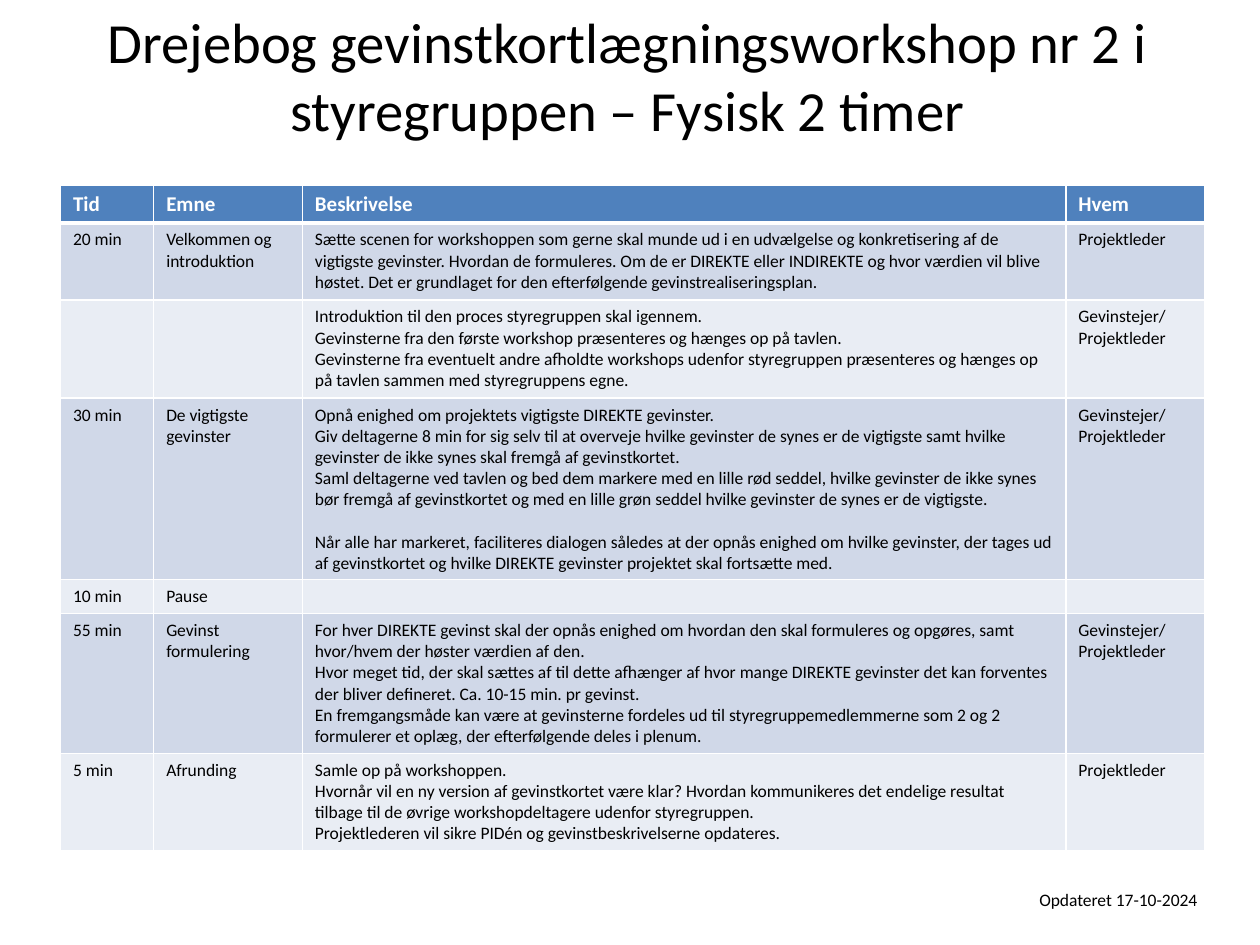
from lxml import etree
from pptx import Presentation
from pptx.dml.color import RGBColor
from pptx.enum.text import MSO_ANCHOR, PP_ALIGN
from pptx.oxml.ns import qn
from pptx.util import Inches, Pt

BLACK = RGBColor(0x00, 0x00, 0x00)
WHITE = RGBColor(0xFF, 0xFF, 0xFF)
HEADER_BLUE = RGBColor(0x4F, 0x81, 0xBD)
BAND_DARK = RGBColor(0xD0, 0xD8, 0xE8)
BAND_LIGHT = RGBColor(0xE9, 0xED, 0xF4)
FONT = "Calibri"

COLUMN_WIDTHS = [0.74, 1.18, 6.06, 1.1]
ROW_HEIGHTS = [0.29, 0.61, 0.78, 1.44, 0.27, 1.11, 0.77]
OWNERS = "Gevinstejer/\nProjektleder"
AGENDA = [
    ("Tid", "Emne", "Beskrivelse", "Hvem"),
    ("20 min", "Velkommen og introduktion",
     "Sætte scenen for workshoppen som gerne skal munde ud i en udvælgelse og "
     "konkretisering af de vigtigste gevinster. Hvordan de formuleres. Om de er "
     "DIREKTE eller INDIREKTE og hvor værdien vil blive høstet. Det er grundlaget "
     "for den efterfølgende gevinstrealiseringsplan.",
     "Projektleder"),
    ("", "",
     "Introduktion til den proces styregruppen skal igennem.\n"
     "Gevinsterne fra den første workshop præsenteres og hænges op på tavlen.\n"
     "Gevinsterne fra eventuelt andre afholdte workshops udenfor styregruppen "
     "præsenteres og hænges op på tavlen sammen med styregruppens egne.",
     OWNERS),
    ("30 min", "De vigtigste gevinster",
     "Opnå enighed om projektets vigtigste DIREKTE gevinster.\n"
     "Giv deltagerne 8 min for sig selv til at overveje hvilke gevinster de synes er "
     "de vigtigste samt hvilke gevinster de ikke synes skal fremgå af gevinstkortet.\n"
     "Saml deltagerne ved tavlen og bed dem markere med en lille rød seddel, hvilke "
     "gevinster de ikke synes bør fremgå af gevinstkortet og med en lille grøn seddel "
     "hvilke gevinster de synes er de vigtigste.\n"
     "Når alle har markeret, faciliteres dialogen således at der opnås enighed om "
     "hvilke gevinster, der tages ud af gevinstkortet og hvilke DIREKTE gevinster "
     "projektet skal fortsætte med.",
     OWNERS),
    ("10 min", "Pause", "", ""),
    ("55 min", "Gevinst\nformulering",
     "For hver DIREKTE gevinst skal der opnås enighed om hvordan den skal formuleres "
     "og opgøres, samt hvor/hvem der høster værdien af den.\n"
     "Hvor meget tid, der skal sættes af til dette afhænger af hvor mange DIREKTE "
     "gevinster det kan forventes der bliver defineret. Ca. 10-15 min. pr gevinst.\n"
     "En fremgangsmåde kan være at gevinsterne fordeles ud til "
     "styregruppemedlemmerne som 2 og 2 formulerer et oplæg, der efterfølgende "
     "deles i plenum.",
     OWNERS),
    ("5 min", "Afrunding",
     "Samle op på workshoppen.\n"
     "Hvornår vil en ny version af gevinstkortet være klar? Hvordan kommunikeres det "
     "endelige resultat tilbage til de øvrige workshopdeltagere udenfor styregruppen.\n"
     "Projektlederen vil sikre PIDén og gevinstbeskrivelserne opdateres.",
     "Projektleder"),
]


def format_text(text_frame, size, color, bold=False):
    for paragraph in text_frame.paragraphs:
        for run in paragraph.runs:
            run.font.name = FONT
            run.font.size = Pt(size)
            run.font.bold = bold
            run.font.color.rgb = color
        if not paragraph.runs:  # keeps the line of an empty cell small
            end = etree.SubElement(paragraph._p, qn("a:endParaRPr"))
            end.set("sz", str(size * 100))


def set_borders(cell, widths):
    properties = cell._tc.get_or_add_tcPr()
    for side, width in widths.items():
        line = etree.SubElement(properties, qn(f"a:ln{side}"), w=str(Pt(width)))
        fill = etree.SubElement(line, qn("a:solidFill"))
        etree.SubElement(fill, qn("a:srgbClr"), val=str(WHITE))


presentation = Presentation()
presentation.slide_width = Inches(10)
presentation.slide_height = Inches(7.5)
slide = presentation.slides.add_slide(presentation.slide_layouts[6])

# Title
title = slide.shapes.add_textbox(Inches(0.48), Inches(0.21), Inches(9), Inches(0.77))
title.text_frame.word_wrap = True
title.text_frame.vertical_anchor = MSO_ANCHOR.MIDDLE
title.text_frame.text = (
    "Drejebog gevinstkortlægningsworkshop nr 2 i styregruppen – Fysisk 2 timer")
title.text_frame.paragraphs[0].alignment = PP_ALIGN.CENTER
format_text(title.text_frame, 32.4, BLACK)

# Agenda table
table = slide.shapes.add_table(
    len(AGENDA), len(COLUMN_WIDTHS), Inches(0.48), Inches(1.47),
    Inches(sum(COLUMN_WIDTHS)), Inches(sum(ROW_HEIGHTS))).table
for column, width in zip(table.columns, COLUMN_WIDTHS):
    column.width = Inches(width)
for row, height in zip(table.rows, ROW_HEIGHTS):
    row.height = Inches(height)

for row_index, texts in enumerate(AGENDA):
    is_header = row_index == 0
    band = BAND_DARK if row_index % 2 else BAND_LIGHT
    for column_index, text in enumerate(texts):
        cell = table.cell(row_index, column_index)
        cell.text_frame.text = text
        format_text(cell.text_frame, 12 if is_header else 10,
                    WHITE if is_header else BLACK, is_header)
        set_borders(cell, {"L": 1, "R": 1, "T": 3 if row_index == 1 else 1,
                           "B": 3 if is_header else 1})
        cell.fill.solid()
        cell.fill.fore_color.rgb = HEADER_BLUE if is_header else band

# One line of air before the closing dialogue
table.cell(3, 2).text_frame.paragraphs[-1].space_before = Pt(12)

# Date of update
updated = slide.shapes.add_textbox(Inches(8.15), Inches(7.01), Inches(1.57), Inches(0.27))
updated.text_frame.word_wrap = True
updated.text_frame.text = "Opdateret 17-10-2024"
format_text(updated.text_frame, 10, BLACK)

presentation.save("out.pptx")
